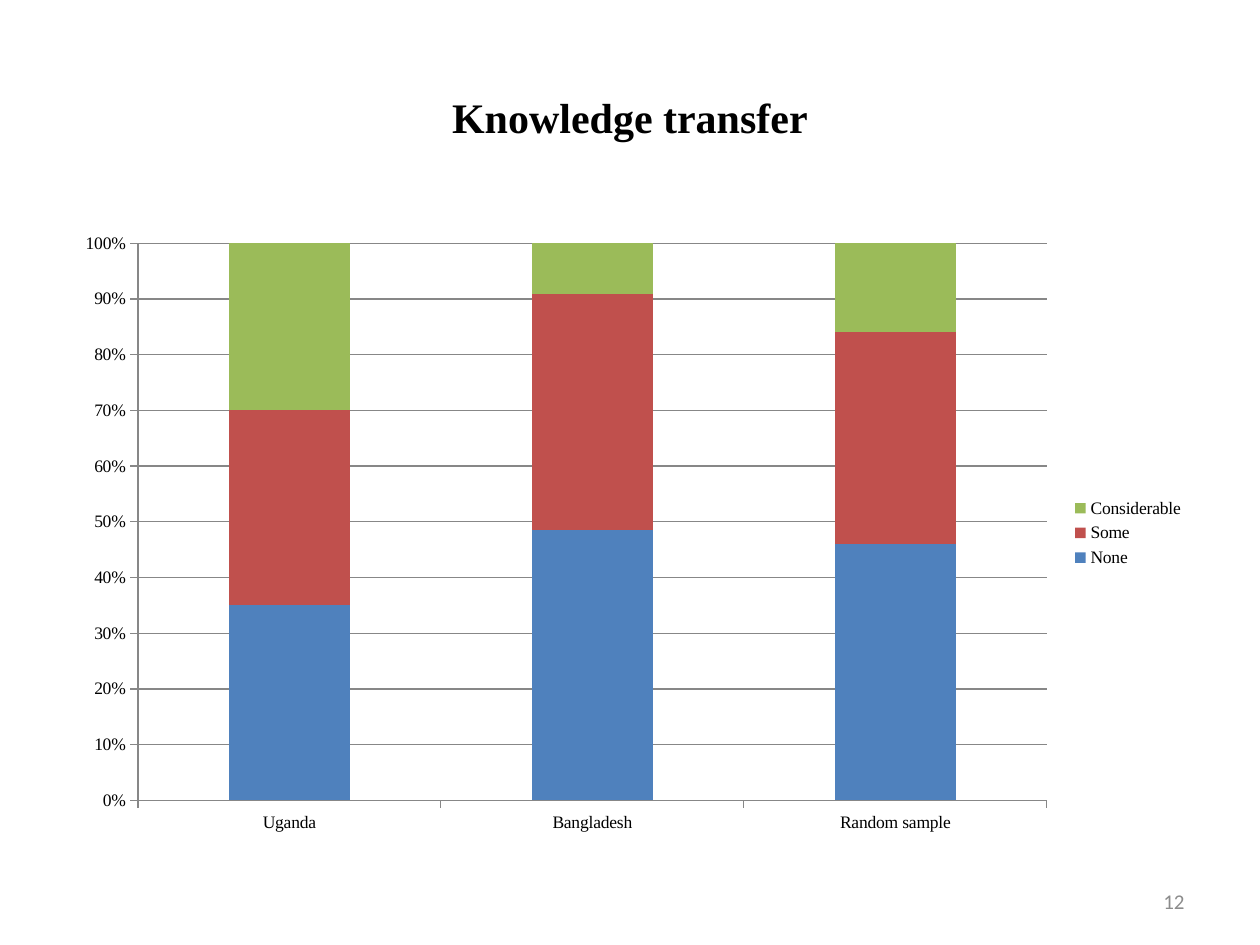
from pptx import Presentation
from pptx.chart.data import CategoryChartData
from pptx.dml.color import RGBColor
from pptx.enum.chart import XL_CHART_TYPE as ChartType
from pptx.enum.chart import XL_LEGEND_POSITION as LegendPosition
from pptx.enum.chart import XL_TICK_MARK as TickMark
from pptx.enum.text import MSO_ANCHOR as Anchor
from pptx.enum.text import PP_ALIGN as Align
from pptx.util import Pt

EMU_PER_PX = 914400 / 126
SERIF = "Times New Roman"
COLORS = {
    "text": "000000",
    "number": "8C8C8C",
    "axis": "878787",
    "None": "4F81BD",
    "Some": "C0504D",
    "Considerable": "9BBB59",
}
COUNTRIES = ["Uganda", "Bangladesh", "Random sample"]
TRANSFER = {
    "None": [35, 48, 46],
    "Some": [35, 42, 38],
    "Considerable": [30, 9, 16],
}


def px(length):
    return round(length * EMU_PER_PX)


def color(name):
    return RGBColor.from_string(COLORS[name])


def style_font(font, name, size, color_name, bold=False):
    font.name = name
    font.size = Pt(size)
    font.bold = bold
    font.color.rgb = color(color_name)


def add_text(slide, box, text, align, **font_style):
    frame = slide.shapes.add_textbox(*map(px, box)).text_frame
    frame.word_wrap = True
    frame.vertical_anchor = Anchor.MIDDLE
    paragraph = frame.paragraphs[0]
    paragraph.text = text
    paragraph.alignment = align
    style_font(paragraph.font, **font_style)


def style_line(line):
    line.color.rgb = color("axis")
    line.width = Pt(0.75)


def add_transfer_chart(slide, box):
    """Add the columns that show each sample's shares of knowledge transfer."""
    data = CategoryChartData()
    data.categories = COUNTRIES
    for name, values in TRANSFER.items():
        data.add_series(name, values)
    chart = slide.shapes.add_chart(
        ChartType.COLUMN_STACKED_100, *map(px, box), data
    ).chart
    style_font(chart.font, SERIF, 10, "text")
    chart.has_title = False
    chart.has_legend = True
    chart.legend.position = LegendPosition.RIGHT
    chart.legend.include_in_layout = False

    plot = chart.plots[0]
    plot.gap_width = 150
    plot.overlap = 100
    plot.vary_by_categories = False
    for series in plot.series:
        series.format.fill.solid()
        series.format.fill.fore_color.rgb = color(series.name)

    for axis in (chart.category_axis, chart.value_axis):
        axis.major_tick_mark = TickMark.OUTSIDE
        axis.minor_tick_mark = TickMark.NONE
        style_line(axis.format.line)
    value_axis = chart.value_axis
    value_axis.has_major_gridlines = True
    style_line(value_axis.major_gridlines.format.line)
    value_axis.tick_labels.number_format = "0%"
    value_axis.tick_labels.number_format_is_linked = False


def main():
    presentation = Presentation()
    presentation.slide_width = px(1260)
    presentation.slide_height = px(945)
    slide = presentation.slides.add_slide(presentation.slide_layouts[6])
    add_text(slide, (63, 38, 1134, 158), "Knowledge transfer", Align.CENTER,
             name=SERIF, size=24, color_name="text", bold=True)
    add_text(slide, (903, 876, 294, 50), "12", Align.RIGHT,
             name="Calibri", size=12, color_name="number")
    add_transfer_chart(slide, (63, 221, 1134, 624))
    presentation.save("out.pptx")


if __name__ == "__main__":
    main()
